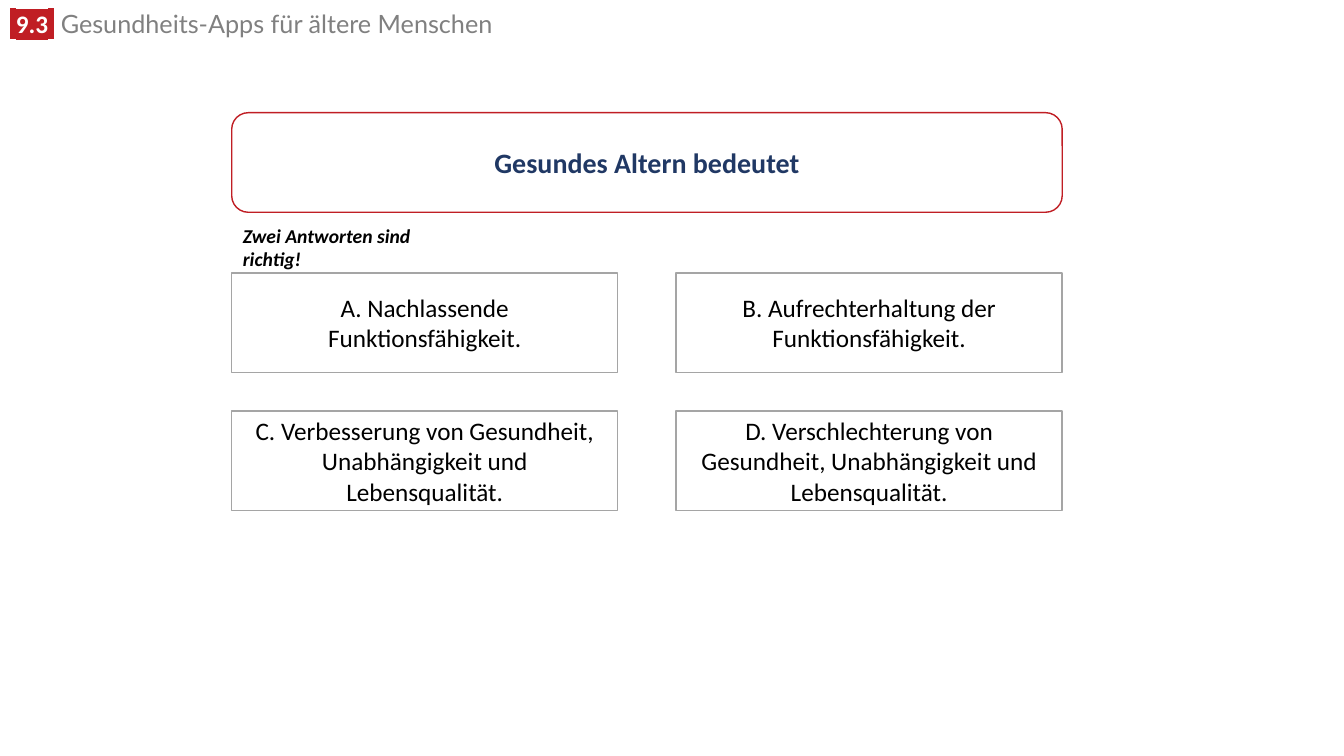
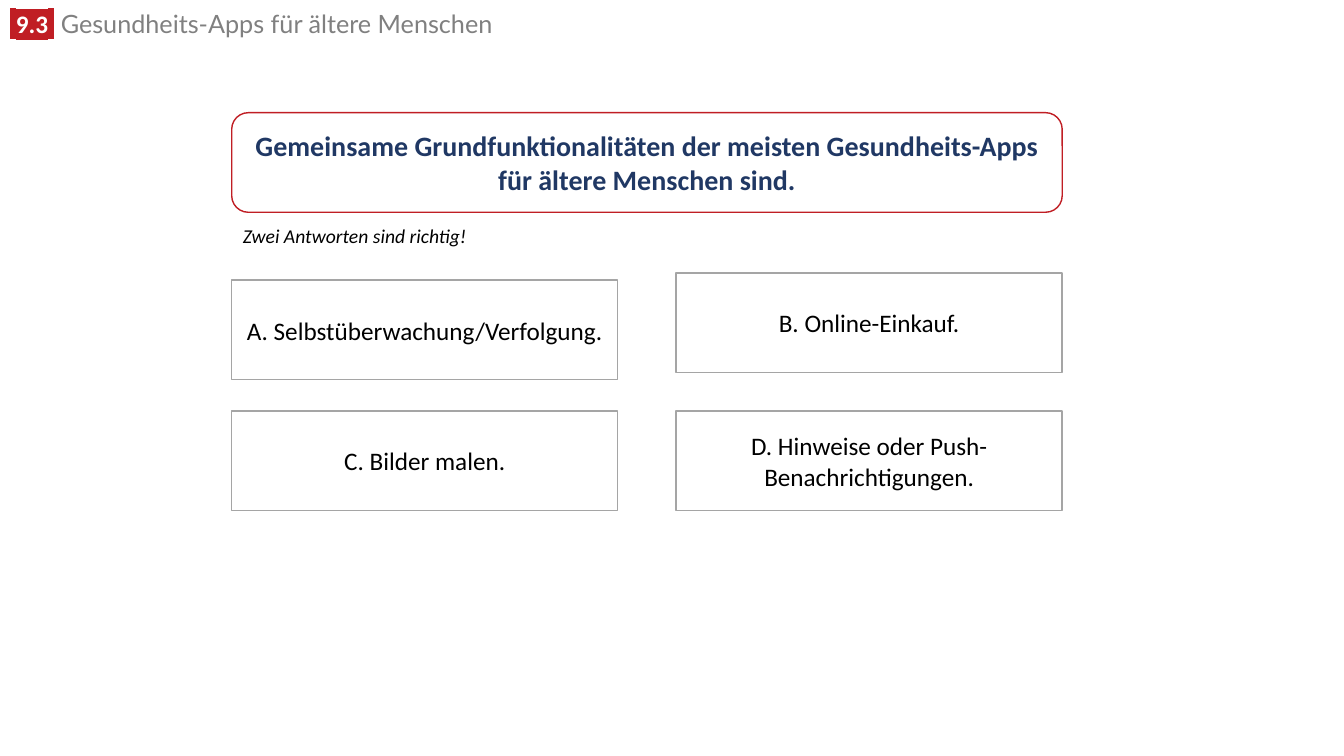
import dataclasses

import lxml.etree
import pptx
import pptx.dml.color
import pptx.enum.shapes
import pptx.enum.text
import pptx.oxml.ns
import pptx.shapes.autoshape
import pptx.slide
import pptx.text.text
import pptx.util

Cm = pptx.util.Cm
RGBColor = pptx.dml.color.RGBColor
Shape = pptx.enum.shapes.MSO_SHAPE

# Colours and fonts
RED = RGBColor(0xC0, 0x1E, 0x24)
NAVY = RGBColor(0x20, 0x38, 0x64)
GREY = RGBColor(0x80, 0x80, 0x80)
BORDER = RGBColor(0xA5, 0xA5, 0xA5)
WHITE = RGBColor(0xFF, 0xFF, 0xFF)
BLACK = RGBColor(0x00, 0x00, 0x00)
BODY_FONT = "Calibri"
HEADER_FONT = "Lato"

# Quiz grid
LEFT = Cm(5.84)
QUESTION_TOP = Cm(2.84)
QUESTION_WIDTH = Cm(20.93)
BOX_HEIGHT = Cm(2.51)
ANSWER_WIDTH = Cm(9.73)
COLUMNS = (LEFT, LEFT + QUESTION_WIDTH - ANSWER_WIDTH)
ROWS = (Cm(6.88), Cm(10.36))


@dataclasses.dataclass(frozen=True)
class Style:
    size: float
    color: RGBColor
    font: str = BODY_FONT
    bold: bool = False
    italic: bool = False
    highlight: RGBColor | None = None


@dataclasses.dataclass(frozen=True)
class Answer:
    text: str
    drop: float = 0  # cm below its row


@dataclasses.dataclass(frozen=True)
class Quiz:
    question: str
    answers: tuple[Answer, ...]
    bold_hint: bool = False


QUESTION_STYLE = Style(20, NAVY, bold=True)
ANSWER_STYLE = Style(18, BLACK)
BADGE_EDGE = Style(18, WHITE, HEADER_FONT, bold=True, highlight=RED)
BADGE_NUMBER = dataclasses.replace(BADGE_EDGE, font=BODY_FONT)
HEADER_STYLE = Style(18, GREY, HEADER_FONT)

QUIZZES = (
    Quiz("Gesundes Altern bedeutet", (
        Answer("A. Nachlassende Funktionsfähigkeit."),
        Answer("B. Aufrechterhaltung der Funktionsfähigkeit."),
        Answer("C. Verbesserung von Gesundheit, Unabhängigkeit und Lebensqualität."),
        Answer("D. Verschlechterung von Gesundheit, Unabhängigkeit und Lebensqualität."),
    ), bold_hint=True),
    Quiz("Gemeinsame Grundfunktionalitäten der meisten Gesundheits-Apps "
         "für ältere Menschen sind.", (
        Answer("A. Selbstüberwachung/Verfolgung.", drop=0.18),
        Answer("B. Online-Einkauf."),
        Answer("C. Bilder malen."),
        Answer("D. Hinweise oder Push-Benachrichtigungen."),
    )),
)


def add_run(para: pptx.text.text._Paragraph, text: str, style: Style) -> None:
    span = para.add_run()
    span.text = text
    span.font.size = pptx.util.Pt(style.size)
    span.font.name = style.font
    span.font.bold = style.bold
    span.font.italic = style.italic
    span.font.color.rgb = style.color
    if style.highlight is not None:
        qn = pptx.oxml.ns.qn
        marker = lxml.etree.Element(qn("a:highlight"))
        lxml.etree.SubElement(marker, qn("a:srgbClr"), val=str(style.highlight))
        span._r.get_or_add_rPr().find(qn("a:solidFill")).addnext(marker)


def add_box(page: pptx.slide.Slide, kind: Shape, left: int, top: int, width: int,
            line: RGBColor, text: str, style: Style) -> None:
    box = page.shapes.add_shape(kind, left, top, width, BOX_HEIGHT)
    box.shadow.inherit = False
    box.fill.solid()
    box.fill.fore_color.rgb = WHITE
    box.line.color.rgb = line
    box.line.width = pptx.util.Pt(1)
    box.text_frame.word_wrap = True
    box.text_frame.vertical_anchor = pptx.enum.text.MSO_ANCHOR.MIDDLE
    para = box.text_frame.paragraphs[0]
    para.alignment = pptx.enum.text.PP_ALIGN.CENTER
    add_run(para, text, style)


def add_text(page: pptx.slide.Slide, left: int, top: int, width: int, height: int,
             wrap: bool) -> pptx.shapes.autoshape.Shape:
    box = page.shapes.add_textbox(left, top, width, height)
    box.text_frame.word_wrap = wrap
    box.text_frame.auto_size = pptx.enum.text.MSO_AUTO_SIZE.SHAPE_TO_FIT_TEXT
    return box


def move_header_to_layout(page: pptx.slide.Slide) -> None:
    """Write the chapter header and hand it to the layout, shared by all slides."""
    layout = page.slide_layout
    for holder in list(layout.placeholders):
        layout.shapes.element.remove(holder.element)
    box = add_text(page, Cm(0), Cm(0.23), Cm(24.18), Cm(0.89), wrap=True)
    para = box.text_frame.paragraphs[0]
    para.line_spacing = 0.8
    add_run(para, " ", BADGE_EDGE)
    add_run(para, "9.3", BADGE_NUMBER)
    add_run(para, " ", BADGE_EDGE)
    add_run(para, " Gesundheits-Apps für ältere Menschen", HEADER_STYLE)
    layout.shapes.element.append(box.element)


def draw_quiz(page: pptx.slide.Slide, quiz: Quiz) -> None:
    # Question
    add_box(page, Shape.ROUNDED_RECTANGLE, LEFT, QUESTION_TOP, QUESTION_WIDTH,
            RED, quiz.question, QUESTION_STYLE)
    # Hint
    hint = add_text(page, Cm(5.87), Cm(5.51), Cm(6.3), Cm(0.86), wrap=False)
    add_run(hint.text_frame.paragraphs[0], "Zwei Antworten sind richtig!",
            Style(14, BLACK, bold=quiz.bold_hint, italic=True))
    # Answers
    for index, answer in enumerate(quiz.answers):
        row, column = divmod(index, len(COLUMNS))
        add_box(page, Shape.RECTANGLE, COLUMNS[column], ROWS[row] + Cm(answer.drop),
                ANSWER_WIDTH, BORDER, answer.text, ANSWER_STYLE)


def main() -> None:
    deck = pptx.Presentation()
    deck.slide_width, deck.slide_height = Cm(33.87), Cm(19.05)
    blank = deck.slide_layouts[6]
    pages = [deck.slides.add_slide(blank) for _ in QUIZZES]
    move_header_to_layout(pages[0])
    for page, quiz in zip(pages, QUIZZES):
        draw_quiz(page, quiz)
    deck.save("out.pptx")


if __name__ == "__main__":
    main()
